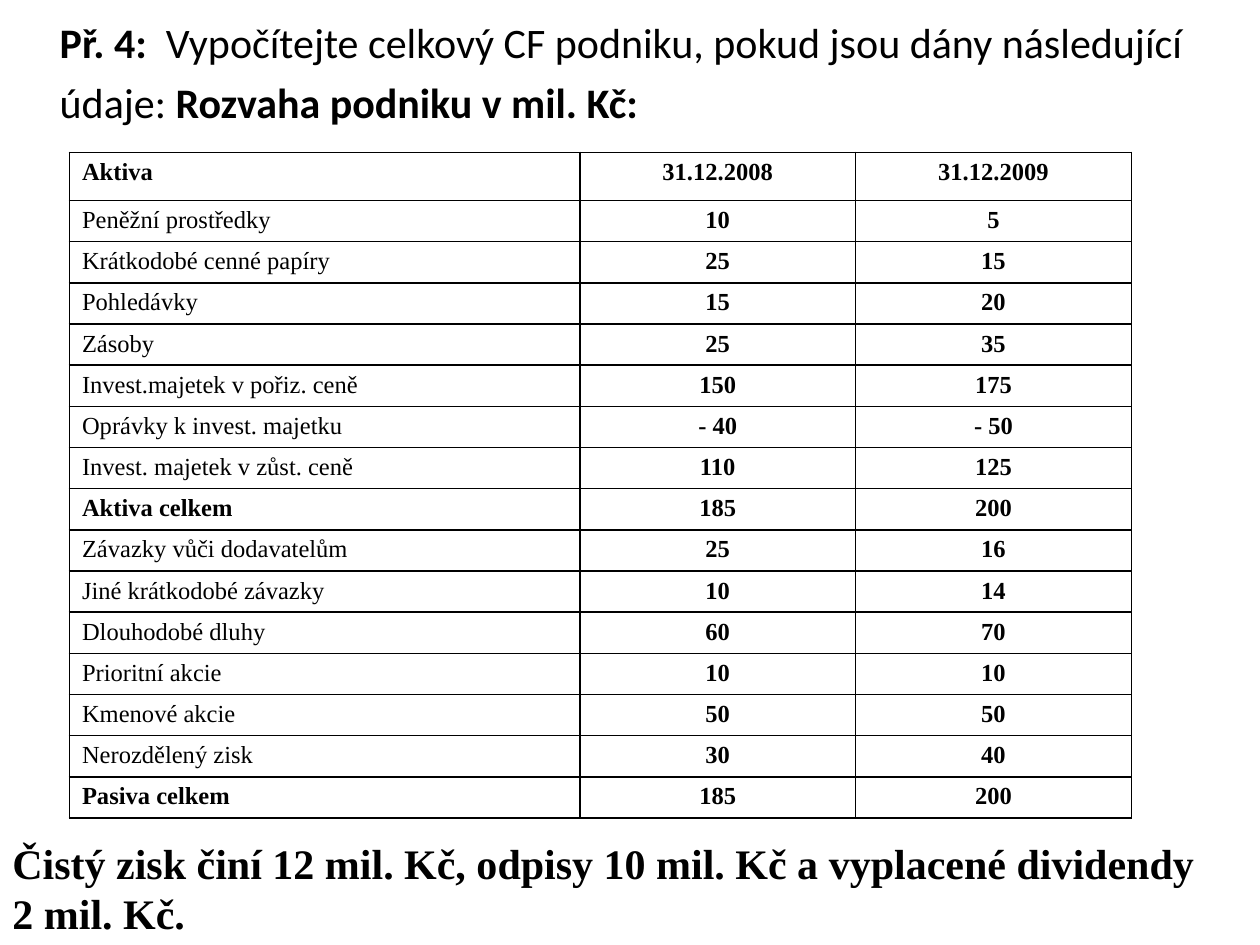
from lxml import etree
from pptx import Presentation
from pptx.dml.color import RGBColor
from pptx.enum.shapes import MSO_SHAPE
from pptx.enum.text import MSO_ANCHOR, MSO_AUTO_SIZE, PP_ALIGN
from pptx.oxml.ns import qn
from pptx.util import Cm, Pt

LEFT, CENTER = PP_ALIGN.LEFT, PP_ALIGN.CENTER
TOP, MIDDLE = MSO_ANCHOR.TOP, MSO_ANCHOR.MIDDLE
BLACK = RGBColor(0x00, 0x00, 0x00)
WHITE = RGBColor(0xFF, 0xFF, 0xFF)
SERIF = "Times New Roman"

HEADING = [
    ("Př. 4:  ", True),
    ("Vypočítejte celkový CF podniku, pokud jsou dány následující údaje: ", False),
    ("Rozvaha podniku v mil. Kč:", True),
]
BALANCE_SHEET = [
    ("Aktiva", "31.12.2008", "31.12.2009"),
    ("Peněžní prostředky", "10", "5"),
    ("Krátkodobé cenné papíry", "25", "15"),
    ("Pohledávky", "15", "20"),
    ("Zásoby", "25", "35"),
    ("Invest.majetek v pořiz. ceně", "150", "175"),
    ("Oprávky k invest. majetku", "- 40", "- 50"),
    ("Invest. majetek v zůst. ceně", "110", "125"),
    ("Aktiva celkem", "185", "200"),
    ("Závazky vůči dodavatelům", "25", "16"),
    ("Jiné krátkodobé závazky", "10", "14"),
    ("Dlouhodobé dluhy", "60", "70"),
    ("Prioritní akcie", "10", "10"),
    ("Kmenové akcie", "50", "50"),
    ("Nerozdělený zisk", "30", "40"),
    ("Pasiva celkem", "185", "200"),
]
BOLD_LABELS = {"Aktiva", "Aktiva celkem", "Pasiva celkem"}
COLUMN_WIDTHS = [Cm(10.29), Cm(5.56), Cm(5.56)]
HEADER_HEIGHT, ROW_HEIGHT = Cm(0.97), Cm(0.83)
RESULT_LINES = [
    "Čistý zisk činí 12 mil. Kč, odpisy 10 mil. Kč a vyplacené dividendy ",
    "2 mil. Kč.",
]


def set_font(font, name, size, bold):
    values = {"name": name, "size": Pt(size), "bold": bold}
    for attribute, value in values.items():
        setattr(font, attribute, value)
    font.color.rgb = BLACK


def fill_white(target):
    target.fill.solid()
    target.fill.fore_color.rgb = WHITE


def add_borders(cell):
    properties = cell._tc.get_or_add_tcPr()
    for position, side in enumerate(("a:lnL", "a:lnR", "a:lnT", "a:lnB")):
        border = etree.Element(qn(side), w=str(Pt(1)))
        solid = etree.SubElement(border, qn("a:solidFill"))
        etree.SubElement(solid, qn("a:srgbClr"), val=str(BLACK))
        properties.insert(position, border)


def add_heading(slide):
    heading = slide.shapes.title
    place = {"left": 0, "top": 0, "width": Cm(24.74), "height": Cm(3.4)}
    for attribute, value in place.items():
        setattr(heading, attribute, value)
    fill_white(heading)
    frame = heading.text_frame
    frame.word_wrap = True
    frame.auto_size = MSO_AUTO_SIZE.NONE
    frame.vertical_anchor = TOP
    paragraph = frame.paragraphs[0]
    paragraph.alignment = LEFT
    paragraph.line_spacing = 1.2
    paragraph._p.get_or_add_pPr().set("marL", str(Cm(0.95)))
    for text, bold in HEADING:
        run = paragraph.add_run()
        run.text = text
        set_font(run.font, "Calibri", 24, bold)


def add_balance_sheet(slide):
    heights = [HEADER_HEIGHT] + [ROW_HEIGHT] * (len(BALANCE_SHEET) - 1)
    table = slide.shapes.add_table(
        len(heights), len(COLUMN_WIDTHS), Cm(1.4), Cm(3.07),
        sum(COLUMN_WIDTHS), sum(heights)).table
    table.first_row = table.horz_banding = False
    for column, width in zip(table.columns, COLUMN_WIDTHS):
        column.width = width
    for row, height, values in zip(table.rows, heights, BALANCE_SHEET):
        row.height = height
        for index, (cell, value) in enumerate(zip(row.cells, values)):
            cell.text = value
            fill_white(cell)
            add_borders(cell)
            paragraph = cell.text_frame.paragraphs[0]
            paragraph.alignment = CENTER if index else LEFT
            set_font(paragraph.runs[0].font, SERIF, 14,
                     index > 0 or value in BOLD_LABELS)


def add_result(slide, slide_width):
    result = slide.shapes.add_shape(
        MSO_SHAPE.RECTANGLE, 0, Cm(16.74), slide_width, Cm(2.31))
    result.shadow.inherit = False
    fill_white(result)
    result.line.fill.background()
    frame = result.text_frame
    frame.word_wrap = True
    frame.vertical_anchor = MIDDLE
    paragraph = frame.paragraphs[0]
    paragraph.alignment = LEFT
    for index, line in enumerate(RESULT_LINES):
        if index:
            paragraph.add_line_break()
        run = paragraph.add_run()
        run.text = line
        set_font(run.font, SERIF, 24, True)


def main():
    presentation = Presentation()
    presentation.slide_width, presentation.slide_height = Cm(25.4), Cm(19.05)
    slide = presentation.slides.add_slide(presentation.slide_layouts[5])
    add_heading(slide)
    add_balance_sheet(slide)
    add_result(slide, presentation.slide_width)
    presentation.save("out.pptx")


if __name__ == "__main__":
    main()
